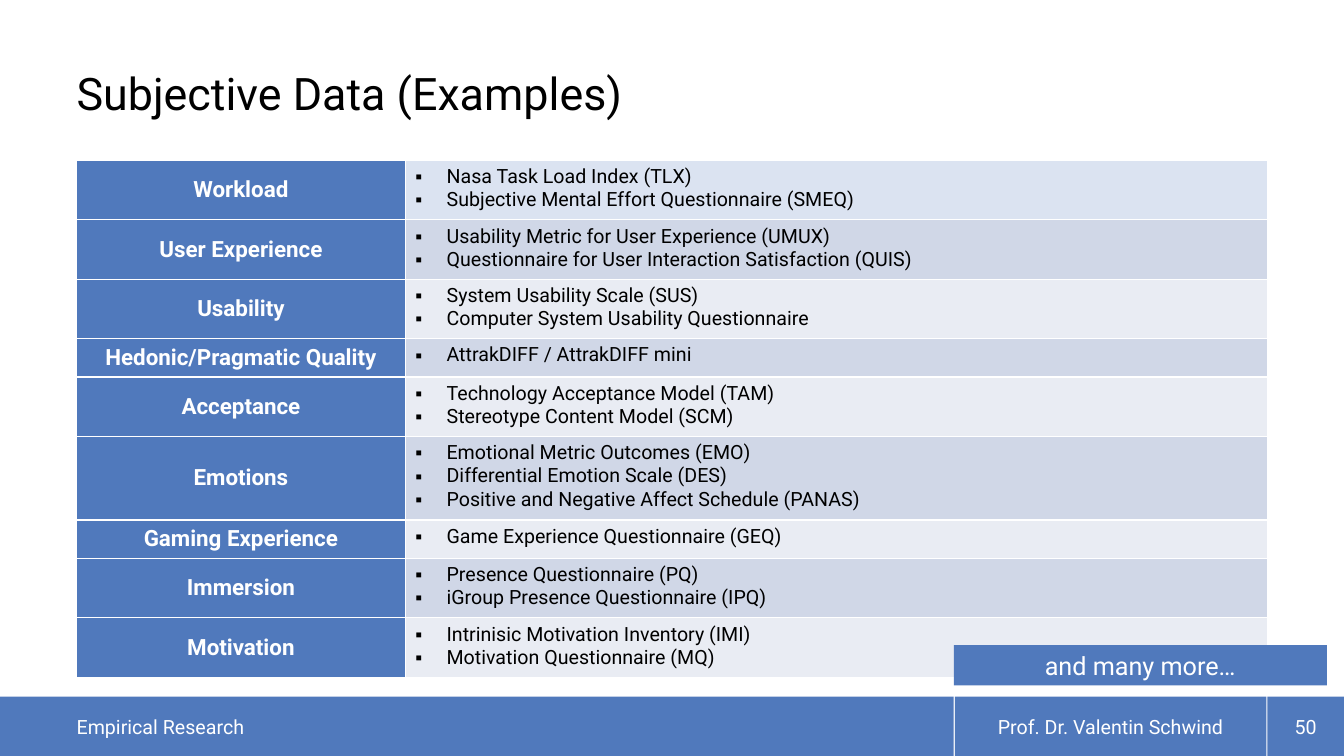
import pptx
import pptx.chart.data
import pptx.dml.color
import pptx.enum.shapes
import pptx.enum.text
import pptx.oxml
import pptx.oxml.ns
import pptx.util
from pptx.util import Inches

RGBColor = pptx.dml.color.RGBColor
Align = pptx.enum.text.PP_ALIGN
Anchor = pptx.enum.text.MSO_ANCHOR

BLUE = RGBColor(0x50, 0x79, 0xBC)
WHITE = RGBColor(0xFF, 0xFF, 0xFF)
BLACK = RGBColor(0, 0, 0)
FIRST = RGBColor(0xDB, 0xE3, 0xF1)
DARK = RGBColor(0xD0, 0xD7, 0xE7)
LIGHT = RGBColor(0xE9, 0xEC, 0xF3)

FONT = "Roboto"
LEFT, WIDTH = 0.76, 11.81
BAR_TOP, BAR_HIGH = 6.91, 0.59
HEIGHTS = {1: 0.38, 2: 0.59, 3: 0.83}  # row height by number of lines

SCALES = [
    ("Workload", ["Nasa Task Load Index (TLX)",
                  "Subjective Mental Effort Questionnaire (SMEQ)"]),
    ("User Experience", ["Usability Metric for User Experience (UMUX)",
                         "Questionnaire for User Interaction Satisfaction (QUIS)"]),
    ("Usability", ["System Usability Scale (SUS)",
                   "Computer System Usability Questionnaire"]),
    ("Hedonic/Pragmatic Quality", ["AttrakDIFF / AttrakDIFF mini"]),
    ("Acceptance", ["Technology Acceptance Model (TAM)",
                    "Stereotype Content Model (SCM)"]),
    ("Emotions", ["Emotional Metric Outcomes (EMO)",
                  "Differential Emotion Scale (DES)",
                  "Positive and Negative Affect Schedule (PANAS)"]),
    ("Gaming Experience", ["Game Experience Questionnaire (GEQ)"]),
    ("Immersion", ["Presence Questionnaire (PQ)",
                   "iGroup Presence Questionnaire (IPQ)"]),
    ("Motivation", ["Intrinisic Motivation Inventory (IMI)",
                    "Motivation Questionnaire (MQ)"]),
]


def add_xml(parent, text, index=None):
    """Insert an a: element given as text, at the end unless an index is set."""
    head, tail = text.split(" ", 1)
    node = pptx.oxml.parse_xml(f"{head} {pptx.oxml.ns.nsdecls('a')} {tail}")
    parent.insert(len(parent) if index is None else index, node)


def write(para, text, size, color, align=Align.LEFT, bold=False):
    para.alignment = align
    run = para.add_run()
    run.text = text
    run.font.name = FONT
    run.font.size = pptx.util.Pt(size)
    run.font.bold = bold
    run.font.color.rgb = color


def set_bullet(para, mark=None):
    """Give the paragraph a hanging bullet, or none."""
    props = para._p.get_or_add_pPr()
    indent = Inches(0.31) if mark else 0
    props.set("marL", str(indent))
    props.set("indent", str(-indent))
    if mark:
        add_xml(props, '<a:buFont typeface="Arial"/>')
        add_xml(props, f'<a:buChar char="{mark}"/>')
    else:
        add_xml(props, "<a:buNone />")


def place(holder, left, top, width, height, anchor):
    """Move a placeholder and return its first paragraph."""
    holder.left, holder.top = Inches(left), Inches(top)
    holder.width, holder.height = Inches(width), Inches(height)
    frame = holder.text_frame
    frame.auto_size = pptx.enum.text.MSO_AUTO_SIZE.NONE
    frame.word_wrap = True
    frame.vertical_anchor = anchor
    frame.margin_left = frame.margin_right = 0
    frame.margin_top = frame.margin_bottom = 0
    para = frame.paragraphs[0]
    para.space_before = pptx.util.Pt(0)
    return para


def add_box(slide, left, top, width, height, text="", size=14):
    box = slide.shapes.add_shape(
        pptx.enum.shapes.MSO_SHAPE.RECTANGLE,
        Inches(left), Inches(top), Inches(width), Inches(height))
    box.shadow.inherit = False
    box.fill.solid()
    box.fill.fore_color.rgb = BLUE
    box.line.fill.background()
    if text:
        box.text_frame.word_wrap = True
        box.text_frame.vertical_anchor = Anchor.MIDDLE
        write(box.text_frame.paragraphs[0], text, size, WHITE, Align.CENTER)
    return box


def style_cell(cell, fill):
    """Fill the cell and draw thin white borders."""
    cell.fill.solid()
    cell.fill.fore_color.rgb = fill
    props = cell._tc.get_or_add_tcPr()
    for index, side in enumerate("LRTB"):
        add_xml(props, f'<a:ln{side} w="12700"><a:solidFill>'
                f'<a:srgbClr val="{WHITE}"/></a:solidFill></a:ln{side}>', index)


def add_scales(slide):
    highs = [HEIGHTS[len(items)] for _, items in SCALES]
    table = slide.shapes.add_table(
        len(SCALES), 2, Inches(LEFT), Inches(1.59),
        Inches(WIDTH), Inches(sum(highs))).table
    table.first_row = table.horz_banding = False
    table.columns[0].width = Inches(3.26)
    table.columns[1].width = Inches(8.55)
    for index, (topic, items) in enumerate(SCALES):
        table.rows[index].height = Inches(highs[index])
        name, body = table.cell(index, 0), table.cell(index, 1)
        style_cell(name, BLUE)
        name.vertical_anchor = Anchor.MIDDLE
        write(name.text_frame.paragraphs[0], topic, 16, WHITE,
              Align.CENTER, True)
        band = DARK if index % 2 else LIGHT
        style_cell(body, band if index else FIRST)
        frame = body.text_frame
        for line, item in enumerate(items):
            para = frame.add_paragraph() if line else frame.paragraphs[0]
            set_bullet(para, "▪")
            write(para, item, 14, BLACK)


def add_footer(slide, body):
    bar = add_box(slide, 0, BAR_TOP, 9.46, BAR_HIGH)
    body.element.addprevious(bar.element)
    para = place(body, LEFT, BAR_TOP, 8.7, BAR_HIGH, Anchor.MIDDLE)
    set_bullet(para)
    write(para, "Empirical Research", 14, WHITE)
    add_box(slide, 9.47, BAR_TOP, 3.09, BAR_HIGH, "Prof. Dr. Valentin Schwind")
    add_box(slide, 12.57, BAR_TOP, 0.76, BAR_HIGH, "50")


def main():
    deck = pptx.Presentation()
    deck.slide_width, deck.slide_height = Inches(13.33), Inches(7.5)
    slide = deck.slides.add_slide(deck.slide_layouts[1])
    title = place(slide.shapes.title, LEFT, 0.13, WIDTH, 1.06, Anchor.BOTTOM)
    title.line_spacing = 0.9
    write(title, "Subjective Data (Examples)", 32, BLACK)
    add_footer(slide, slide.placeholders[1])
    add_scales(slide)
    add_box(slide, 9.46, 6.4, 3.7, 0.4, "and many more…", 18)
    deck.save("out.pptx")


if __name__ == "__main__":
    main()
